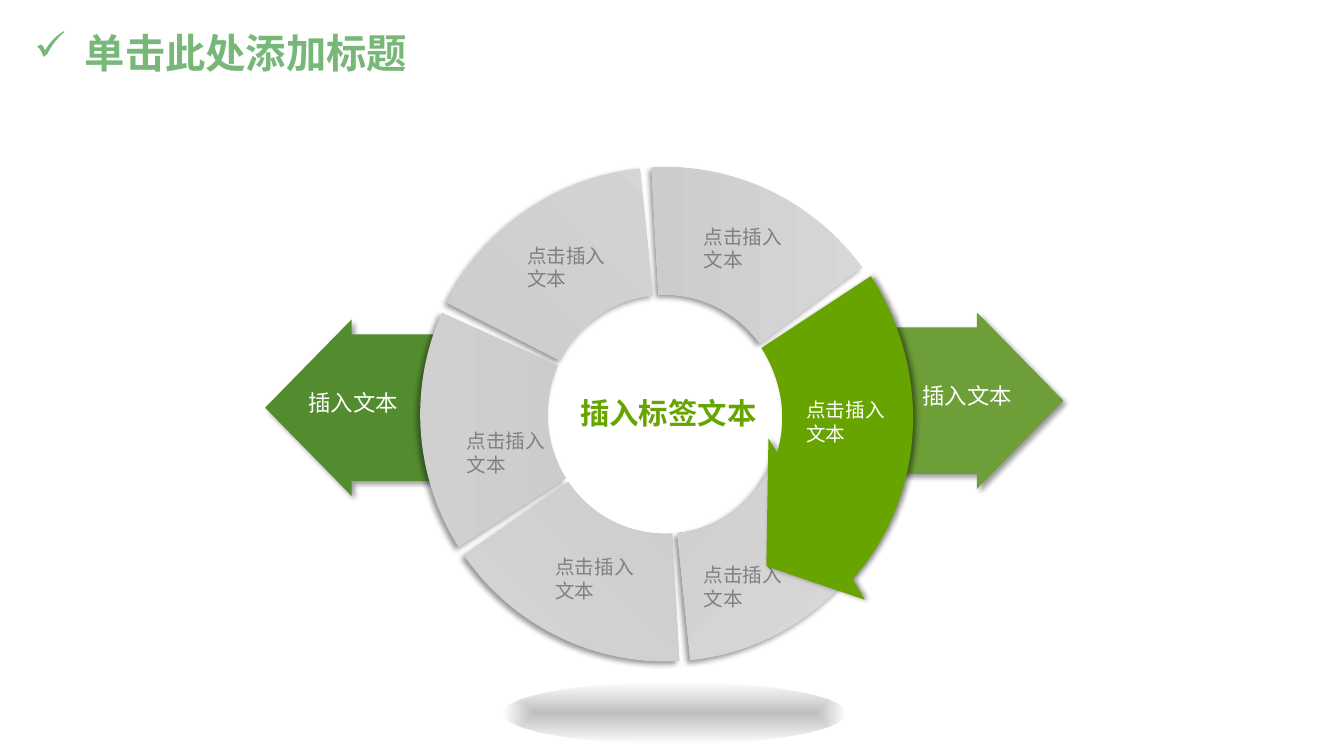
"""Build a slide with a six-part ring diagram flanked by two arrows."""
import dataclasses

import pptx
import pptx.dml.color
import pptx.enum.shapes
import pptx.enum.text
import pptx.oxml
import pptx.oxml.ns
import pptx.util

Pt = pptx.util.Pt
SHAPE = pptx.enum.shapes.MSO_SHAPE
ALIGN = pptx.enum.text.PP_ALIGN
ANCHOR = pptx.enum.text.MSO_ANCHOR
AUTO_SIZE = pptx.enum.text.MSO_AUTO_SIZE


@dataclasses.dataclass(frozen=True)
class Theme:
    title: str = "77B878"
    accent: str = "67A400"
    left_arrow: str = "538C2E"
    right_arrow: str = "6D9E38"
    muted: str = "808080"
    light: str = "FFFFFF"
    floor: str = "A3A3A3"
    title_size: float = 28.8
    centre_size: float = 21
    arrow_size: float = 16
    label_size: float = 14
    title_font: str = "Montserrat"
    body_font: str = "Noto Sans CJK SC"


def append_xml(parent, tag, content="", **attributes):
    pairs = "".join(f' {name}="{value}"' for name, value in attributes.items())
    namespace = pptx.oxml.ns.nsdecls("a")
    element = pptx.oxml.parse_xml(f"<a:{tag} {namespace}{pairs}>{content}</a:{tag}>")
    parent.append(element)
    return element


def write_text(frame, text, size, color, font, bold=False, align=ALIGN.LEFT):
    paragraph = frame.paragraphs[0]
    paragraph.alignment = align
    run = paragraph.add_run()
    run.text = text
    run.font.size = Pt(size)
    run.font.bold = bold
    run.font.name = font
    run.font.color.rgb = pptx.dml.color.RGBColor.from_string(color)
    append_xml(run.font._element, "ea", typeface=font)
    return paragraph


def gradient_stop(position, color, alpha=100):
    return (f'<a:gs pos="{position * 1000}"><a:srgbClr val="{color}">'
            f'<a:alpha val="{alpha * 1000}"/></a:srgbClr></a:gs>')


def linear(angle):
    return f'<a:lin ang="{angle * 60000}" scaled="0"/>'


def radial(kind, left, top, right, bottom):
    return (f'<a:path path="{kind}"><a:fillToRect l="{left * 1000}" t="{top * 1000}" '
            f'r="{right * 1000}" b="{bottom * 1000}"/></a:path>')


class SlideBuilder:
    def __init__(self, slide, theme):
        self.slide = slide
        self.theme = theme

    def title(self, text, left, top, width, height):
        shape = self.slide.shapes.title
        shape.left, shape.top, shape.width, shape.height = map(Pt, (left, top, width, height))
        frame = shape.text_frame
        frame.vertical_anchor = ANCHOR.MIDDLE
        frame.auto_size = AUTO_SIZE.NONE
        paragraph = write_text(frame, text, self.theme.title_size, self.theme.title,
                               self.theme.title_font, bold=True)
        paragraph.line_spacing = 0.9
        properties = paragraph._p.get_or_add_pPr()
        properties.set("marL", str(Pt(36)))
        properties.set("indent", str(-Pt(36)))
        append_xml(properties, "buChar", char="✓")

    def text(self, text, left, top, width, height, size, color, fill=None,
             bold=False, align=ALIGN.LEFT, insets=(7.2, 3.6)):
        box = self.slide.shapes.add_textbox(*map(Pt, (left, top, width, height)))
        if fill:
            box.fill.solid()
            box.fill.fore_color.rgb = pptx.dml.color.RGBColor.from_string(fill)
        frame = box.text_frame
        frame.word_wrap = True
        frame.auto_size = AUTO_SIZE.SHAPE_TO_FIT_TEXT
        frame.margin_left = frame.margin_right = Pt(insets[0])
        frame.margin_top = frame.margin_bottom = Pt(insets[1])
        write_text(frame, text, size, color, self.theme.body_font, bold, align)

    def shape(self, kind, left, top, width, height, fill=None, stops=(), direction="",
              adjustments=(), shadow=None, rotation=0):
        shape = self.slide.shapes.add_shape(kind, *map(Pt, (left, top, width, height)))
        shape.rotation = rotation
        for index, value in enumerate(adjustments):
            shape.adjustments[index] = value
        if fill:
            shape.fill.solid()
            shape.fill.fore_color.rgb = pptx.dml.color.RGBColor.from_string(fill)
        else:
            content = "".join(gradient_stop(*stop) for stop in stops)
            append_xml(shape.element.spPr, "gradFill",
                       f"<a:gsLst>{content}</a:gsLst>{direction}", rotWithShape=1)
        shape.line.fill.background()
        shape.shadow.inherit = False
        if shadow:
            alpha, blur, distance, angle = shadow
            effects = shape.element.spPr.find(pptx.oxml.ns.qn("a:effectLst"))
            append_xml(effects, "outerShdw",
                       f'<a:srgbClr val="000000"><a:alpha val="{alpha * 1000}"/></a:srgbClr>',
                       blurRad=Pt(blur), dist=Pt(distance), dir=angle * 60000, rotWithShape=0)

    def label(self, left, top, color):
        self.text("点击插入文本", left, top, 71.3, 41, self.theme.label_size, color)

    def segment(self, start, end, thickness, colors, direction, label_left, label_top):
        self.shape(SHAPE.BLOCK_ARC, 300.2, 119.5, 349.9, 352.8,
                   stops=[(0, colors[0]), (100, colors[1])], direction=direction,
                   adjustments=(start * 0.6, end * 0.6, thickness), shadow=(40, 4, 3, 135))
        self.label(label_left, label_top, self.theme.muted)

    def side_arrow(self, kind, left, top, color):
        self.shape(kind, left, top, 131.8, 126, fill=color,
                   adjustments=(0.83, 0.49), shadow=(40, 4, 3, 45))
        self.text("插入文本", left + 24, top + 46.1, 88.6, 26.6,
                  self.theme.arrow_size, self.theme.light, fill=color)


def main():
    presentation = pptx.Presentation()
    presentation.slide_width = Pt(960)
    presentation.slide_height = Pt(540)
    theme = Theme()
    builder = SlideBuilder(presentation.slides.add_slide(presentation.slide_layouts[5]), theme)

    builder.title("单击此处添加标题", 17.3, 20.9, 828, 36.7)
    builder.segment(19.01, 84.12, 0.26, ("D9D9D9", "C1C1C1"),
                    radial("circle", 100, 100, 0, 0), 495.4, 398.9)
    builder.side_arrow(SHAPE.RIGHT_ARROW, 627.8, 223.2, theme.right_arrow)
    builder.side_arrow(SHAPE.LEFT_ARROW, 189.4, 228.2, theme.left_arrow)
    builder.text("插入标签文本", 400.3, 277.2, 154.1, 35.3, theme.centre_size, theme.accent,
                 bold=True, align=ALIGN.CENTER, insets=(9.4, 5))
    builder.shape(SHAPE.CIRCULAR_ARROW, 280.1, 100.1, 398.9, 381.6, fill=theme.accent,
                  adjustments=(0.245, 12.945, 202.675, 160.141, 0.176),
                  shadow=(45, 4, 2, 0), rotation=59.8)
    builder.label(568.8, 280.8, theme.light)
    for segment in (
        (266.85, 323.26, 0.26, ("D9D9D9", "BFBFBF"), linear(180), 495.4, 157),
        (207.11, 264.12, 0.26, ("D9D9D9", "C5C5C5"), linear(135), 369.4, 170.6),
        (147.23, 204.47, 0.26, ("D0D0D0", "BEBEBE"), linear(0), 326.2, 303.1),
        (86.71, 144.94, 0.26, ("D5D5D5", "C0C0C0"), linear(315), 389.5, 393.1),
    ):
        builder.segment(*segment)
    builder.shape(SHAPE.OVAL, 360, 487.4, 244.1, 43.9,
                  stops=[(0, theme.floor, 70), (100, theme.floor, 0)],
                  direction=radial("shape", 50, 50, 50, 50))
    presentation.save("out.pptx")


if __name__ == "__main__":
    main()
